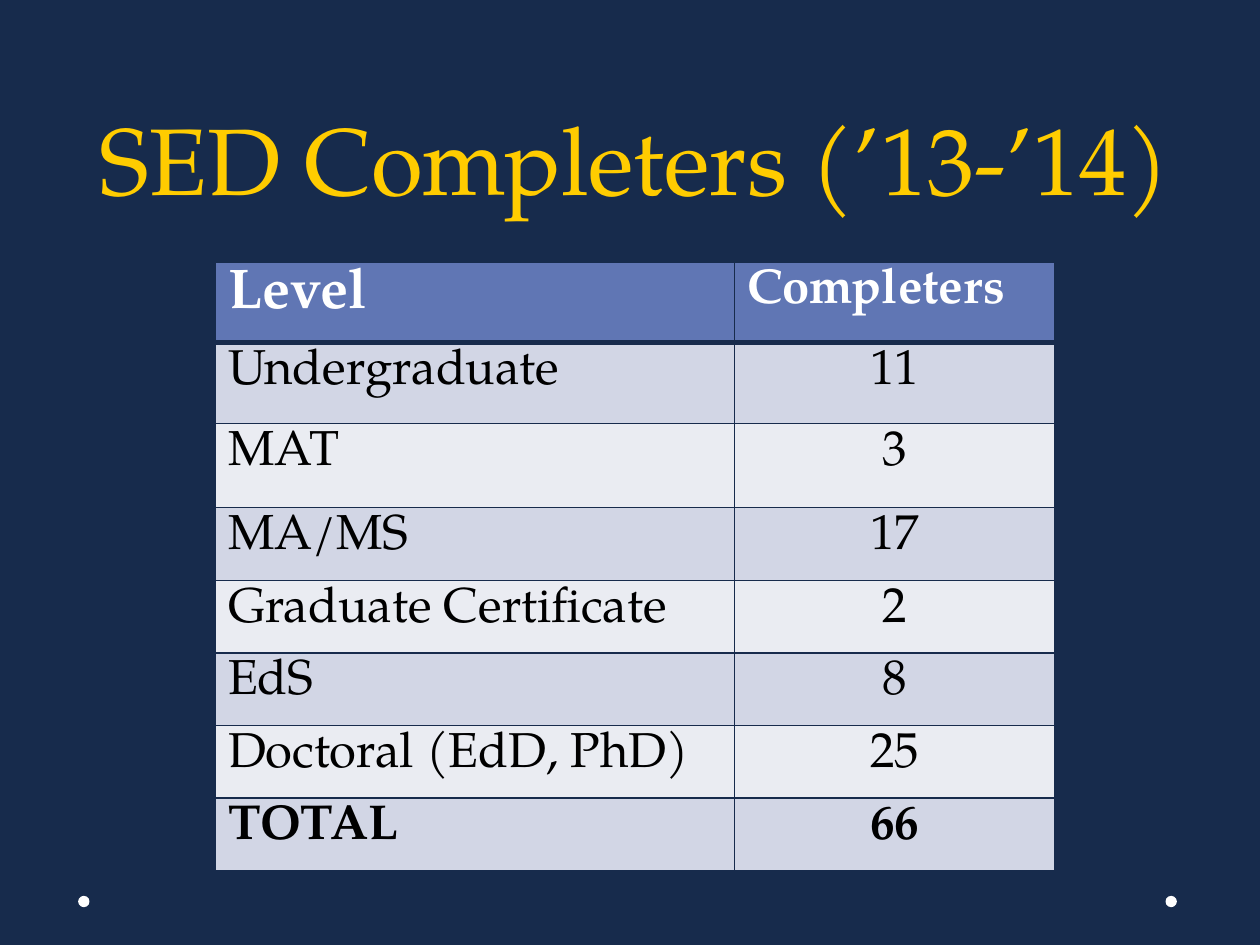
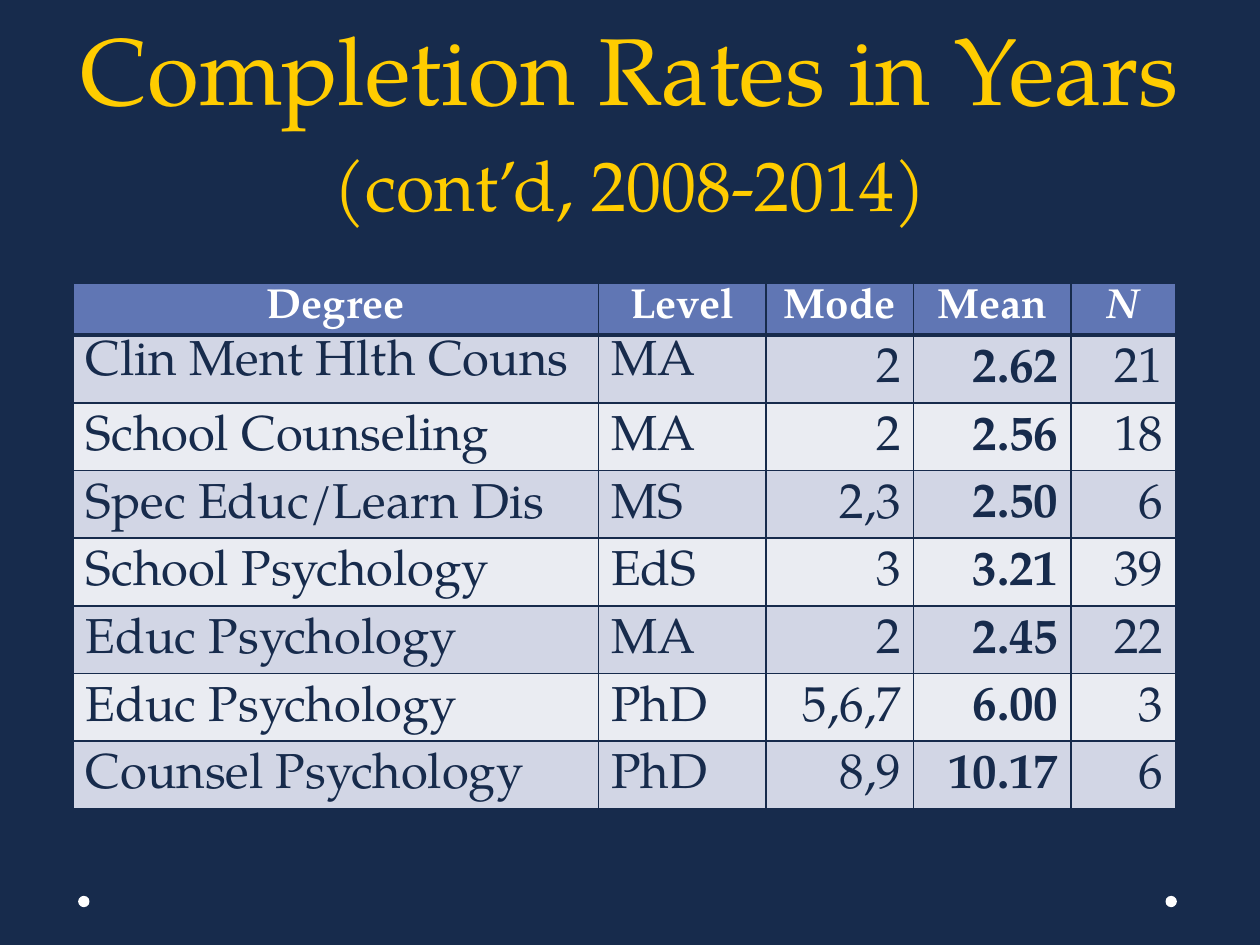
from lxml.etree import SubElement
from pptx import Presentation
from pptx.dml.color import RGBColor
from pptx.enum.shapes import MSO_SHAPE as Shape
from pptx.enum.text import MSO_ANCHOR as Anchor, PP_ALIGN as Align
from pptx.oxml.ns import qn
from pptx.util import Inches, Pt

# Shared look
FONT = "TeX Gyre Pagella"
NAVY, GOLD, WHITE, BLACK = "172B4C", "FFCC00", "FFFFFF", "000000"
HEADER_FILL = "6076B4"
BAND_FILLS = ("D2D6E5", "EAECF2")

# Slide content
COMPLETERS = [
    ("Level", "Completers"),
    ("Undergraduate", "11"),
    ("MAT", "3"),
    ("MA/MS", "17"),
    ("Graduate Certificate", "2"),
    ("EdS", "8"),
    ("Doctoral (EdD, PhD)", "25"),
    ("TOTAL", "66"),
]
RATES = [
    ("Degree", "Level", "Mode", "Mean", "N"),
    ("Clin Ment Hlth Couns", "MA", "2", "2.62", "21"),
    ("School Counseling", "MA", "2", "2.56", "18"),
    ("Spec Educ/Learn Dis", "MS", "2,3", "2.50", "6"),
    ("School Psychology", "EdS", "3", "3.21", "39"),
    ("Educ Psychology", "MA", "2", "2.45", "22"),
    ("Educ Psychology", "PhD", "5,6,7", "6.00", "3"),
    ("Counsel Psychology", "PhD", "8,9", "10.17", "6"),
]


def color(value):
    return RGBColor.from_string(value)


def style_font(font, size, value, bold=False, italic=False):
    font.name, font.size = FONT, Pt(size)
    font.bold, font.italic = bold, italic
    font.color.rgb = color(value)


def add_page(deck):
    """Add a navy page with a white dot in each lower corner."""
    page = deck.slides.add_slide(deck.slide_layouts[6])
    page.background.fill.solid()
    page.background.fill.fore_color.rgb = color(NAVY)
    for left in (9.25, 0.62):
        dot = page.shapes.add_shape(Shape.OVAL, Inches(left), Inches(7.11),
                                    Inches(0.09), Inches(0.09))
        dot.shadow.inherit = False
        dot.fill.solid()
        dot.fill.fore_color.rgb = color(WHITE)
        dot.line.fill.background()
    return page


def add_title(page, left, top, height, lines):
    """Add a centred title; lines holds (text, size) pairs."""
    box = page.shapes.add_textbox(Inches(left), Inches(top), Inches(9), Inches(height))
    frame = box.text_frame
    frame.word_wrap = True
    frame.vertical_anchor = Anchor.BOTTOM
    para = frame.paragraphs[0]
    para.alignment = Align.CENTER
    para.line_spacing = Pt(58)
    style_font(para.font, lines[0][1], GOLD)
    for index, (text, size) in enumerate(lines):
        if index:
            para.add_line_break()
        span = para.add_run()
        span.text = text
        style_font(span.font, size, GOLD)


def set_borders(cell, row):
    """Draw thin navy borders, thicker below the header row."""
    properties = cell._tc.get_or_add_tcPr()
    widths = {"L": 1, "R": 1, "T": 3 if row == 1 else 1, "B": 3 if row == 0 else 1}
    for side, width in widths.items():
        line = SubElement(properties, qn(f"a:ln{side}"), w=str(Pt(width)))
        fill = SubElement(line, qn("a:solidFill"))
        SubElement(fill, qn("a:srgbClr"), val=NAVY)


def add_table(page, left, top, widths, heights, rows, style_cell, inset):
    """Add a banded table; style_cell sets each cell's paragraph."""
    table = page.shapes.add_table(len(rows), len(widths), Inches(left), Inches(top),
                                  Inches(sum(widths)), Inches(sum(heights))).table
    for column, width in zip(table.columns, widths):
        column.width = Inches(width)
    for r, (values, height) in enumerate(zip(rows, heights)):
        table.rows[r].height = Inches(height)
        for c, text in enumerate(values):
            cell = table.cell(r, c)
            set_borders(cell, r)
            cell.fill.solid()
            cell.fill.fore_color.rgb = color(BAND_FILLS[(r - 1) % 2] if r else HEADER_FILL)
            # The bottom margin cancels the top one, so text never stretches a row
            cell.margin_top, cell.margin_bottom = Inches(inset), Inches(-inset)
            cell.text = text
            style_cell(cell.text_frame.paragraphs[0], r, c)


def style_completers(para, row, column):
    if row == 0:
        style_font(para.font, 28 if column else 32, WHITE, bold=True)
        return
    style_font(para.font, 28, BLACK, bold=row == len(COMPLETERS) - 1)
    para.alignment = Align.CENTER if column else Align.LEFT


def style_rates(para, row, column):
    if row == 0:
        style_font(para.font, 24, WHITE, bold=True, italic=column == 4)
        para.alignment = Align.CENTER
        return
    style_font(para.font, 28, NAVY, bold=column == 3)
    para.alignment = Align.RIGHT if column > 1 else Align.LEFT
    if row > 1 or column > 1:
        para.line_spacing = 1.15


def main():
    deck = Presentation()
    deck.slide_width, deck.slide_height = Inches(10), Inches(7.5)

    # Completers by level
    page = add_page(deck)
    add_title(page, 0.54, 0.5, 1.25, [("SED Completers (’13-’14)", 54)])
    top_heights = [0.64, 0.64, 0.67]
    even_height = (4.83 - sum(top_heights)) / 5
    add_table(page, 1.71, 2.08, (4.12, 2.54), top_heights + [even_height] * 5,
              COMPLETERS, style_completers, 0.05)

    # Completion rates by degree
    page = add_page(deck)
    add_title(page, 0.5, 0.67, 1.17,
              [("Completion Rates in Years", 54), ("(cont’d, 2008-2014)", 40)])
    add_table(page, 0.58, 2.25, (4.17, 1.33, 1.17, 1.25, 0.83), [0.41] + [0.53] * 7,
              RATES, style_rates, 0.04)

    deck.save("out.pptx")


if __name__ == "__main__":
    main()
